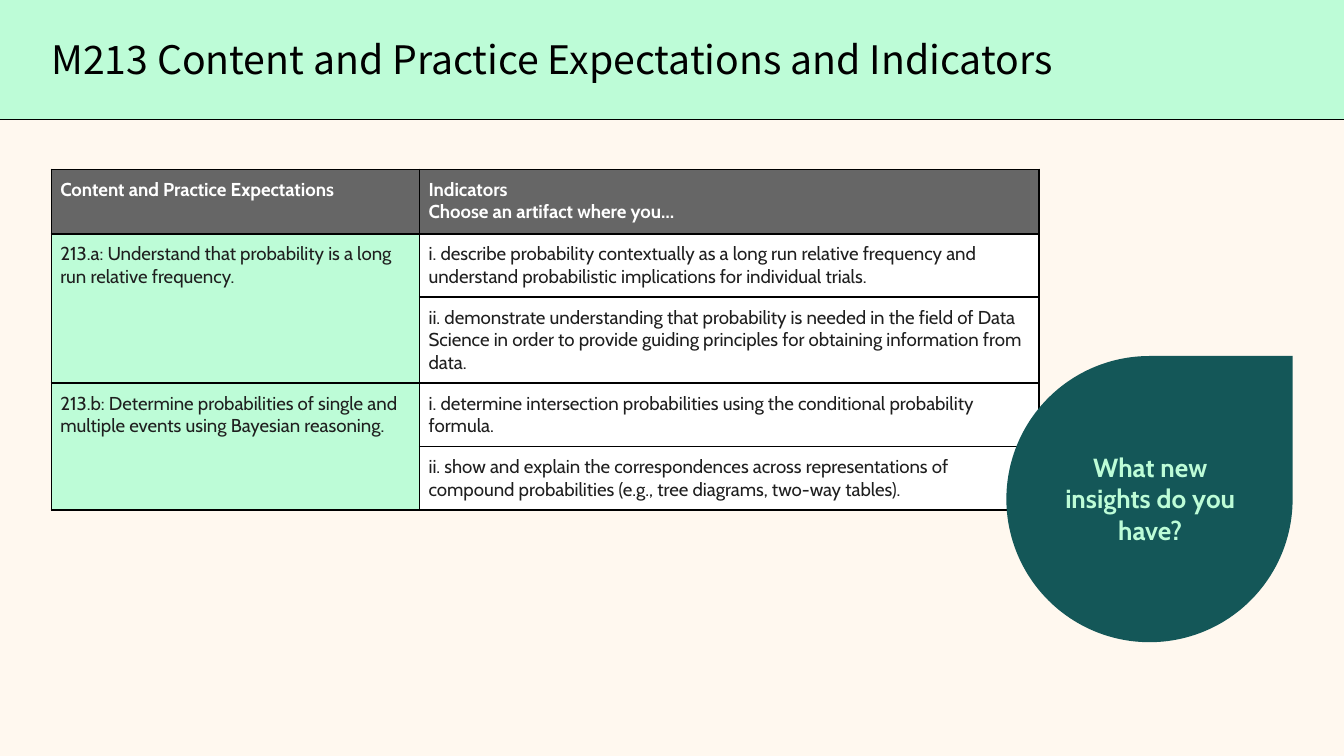
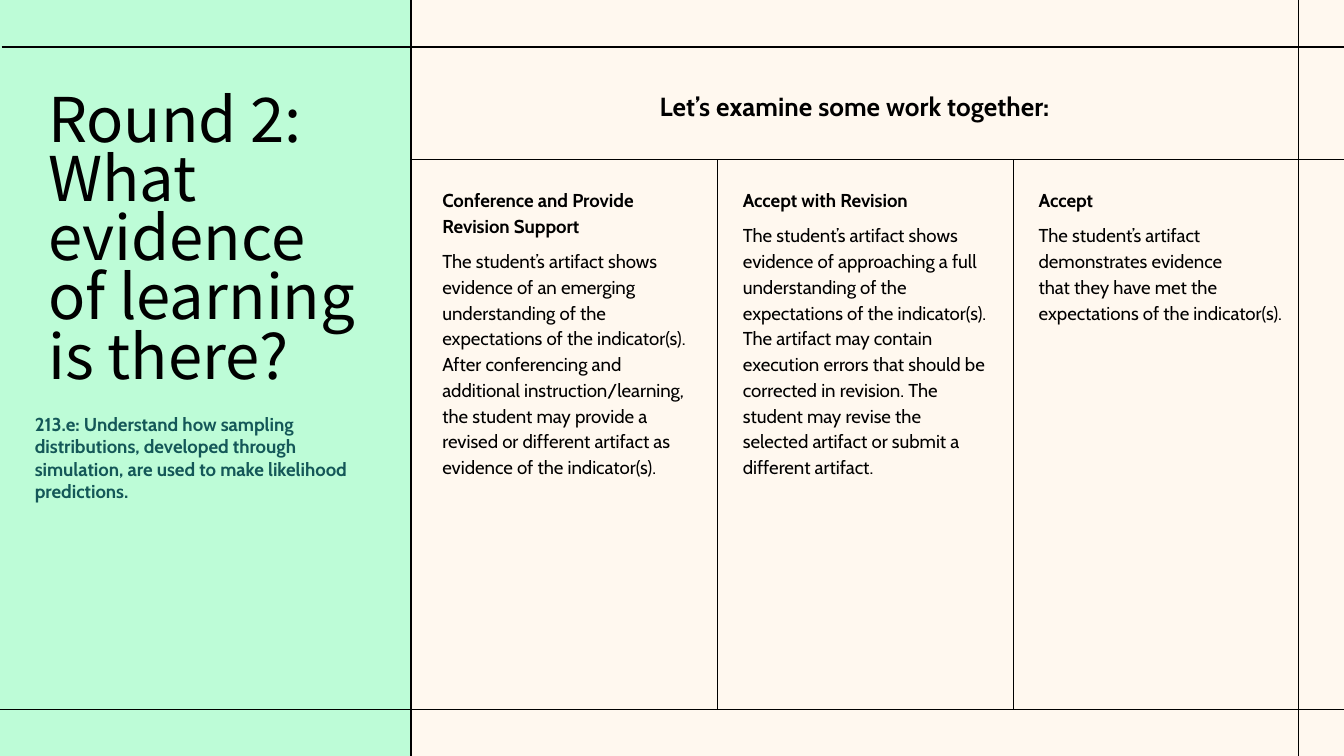
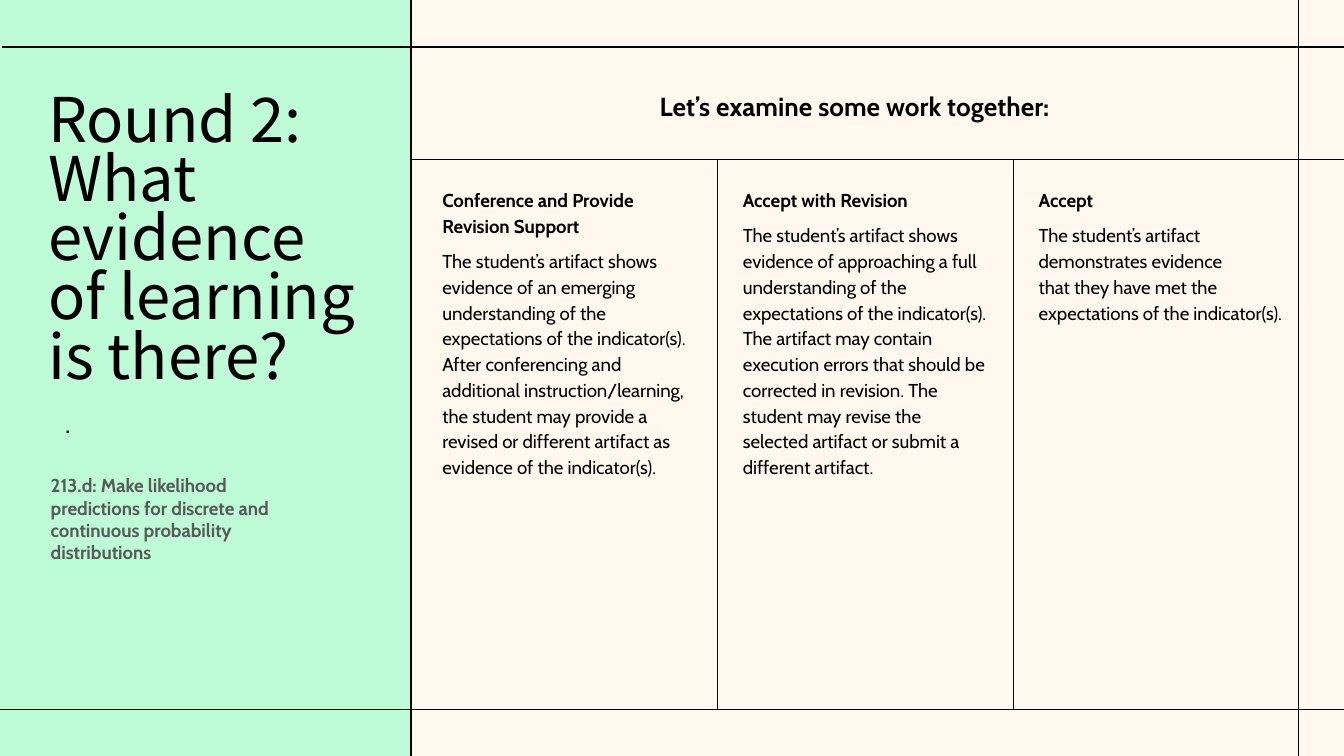
from lxml.etree import SubElement
from pptx import Presentation
from pptx.dml.color import RGBColor
from pptx.enum.shapes import MSO_CONNECTOR, MSO_SHAPE
from pptx.enum.text import MSO_ANCHOR, MSO_AUTO_SIZE, PP_ALIGN
from pptx.oxml.ns import qn
from pptx.util import Cm, Pt

W, H = 25.4, 14.29
CREAM, MINT, TEAL = "FFF8EF", "BDFCD7", "145758"
BLACK, WHITE, INK, HEADER, GRAY = "000000", "FFFFFF", "1F1F1F", "666666", "595959"
TITLE_FONT, BODY_FONT = "Noto Sans CJK KR", "Cabin"

EXPECTATIONS = [
    ("213.a: Understand that probability is a long run relative frequency.", [
        "i. describe probability contextually as a long run relative frequency and "
        "understand probabilistic implications for individual trials.",
        "ii. demonstrate understanding that probability is needed in the field of Data "
        "Science in order to provide guiding principles for obtaining information from data."]),
    ("213.b: Determine probabilities of single and multiple events using Bayesian reasoning.", [
        "i. determine intersection probabilities using the conditional probability formula.",
        "ii. show and explain the correspondences across representations of compound "
        "probabilities (e.g., tree diagrams, two-way tables)."]),
]

DECISIONS = [
    (8.36, 6.5, "Conference and Provide Revision Support",
     "The student’s artifact shows evidence of an emerging understanding of the "
     "expectations of the indicator(s). After conferencing and additional "
     "instruction/learning, the student may provide a revised or different artifact as "
     "evidence of the indicator(s)."),
    (14.04, 6.02, "Accept with Revision",
     "The student’s artifact shows evidence of approaching a full understanding of the "
     "expectations of the indicator(s). The artifact may contain execution errors that "
     "should be corrected in revision. The student may revise the selected artifact or "
     "submit a different artifact."),
    (19.63, 3.07, "Accept",
     "The student’s artifact demonstrates evidence \nthat they have met the expectations "
     "of the indicator(s)."),
]


def rgb(color):
    return RGBColor.from_string(color)


class Deck:
    """Hold the shared style and the current slide, and draw each kind of element."""

    def __init__(self):
        self.prs = Presentation()
        self.prs.slide_width, self.prs.slide_height = Cm(W), Cm(H)

    def slide(self):
        self.s = self.prs.slides.add_slide(self.prs.slide_layouts[6])
        fill = self.s.background.fill
        fill.solid()
        fill.fore_color.rgb = rgb(CREAM)

    def shape(self, kind, x, y, w, h, color):
        sp = self.s.shapes.add_shape(kind, Cm(x), Cm(y), Cm(w), Cm(h))
        sp.shadow.inherit = False
        sp.fill.solid()
        sp.fill.fore_color.rgb = rgb(color)
        sp.line.fill.background()

    def line(self, x1, y1, x2, y2):
        cn = self.s.shapes.add_connector(MSO_CONNECTOR.STRAIGHT, Cm(x1), Cm(y1), Cm(x2), Cm(y2))
        cn.line.color.rgb = rgb(BLACK)
        cn.line.width = Pt(0.75)
        SubElement(cn._element.spPr, qn("a:effectLst"))

    def box(self, x, y, w, h, inset=0):
        tf = self.s.shapes.add_textbox(Cm(x), Cm(y), Cm(w), Cm(h)).text_frame
        tf.word_wrap = True
        tf.auto_size = MSO_AUTO_SIZE.SHAPE_TO_FIT_TEXT
        tf.vertical_anchor = MSO_ANCHOR.TOP
        tf.margin_left = tf.margin_right = tf.margin_top = tf.margin_bottom = Cm(inset)
        return tf

    def para(self, tf, text, size=10, color=BLACK, bold=False, font=BODY_FONT,
             align=PP_ALIGN.LEFT, spacing=None, gap=None):
        p = tf.add_paragraph() if tf.text else tf.paragraphs[0]
        p.alignment = align
        p.line_spacing = spacing
        if gap is not None:
            p.space_before = p.space_after = Pt(gap)
        for i, part in enumerate(text.split("\n")):
            if i:
                p.add_line_break()
            r = p.add_run()
            r.text = part
            r.font.size, r.font.bold, r.font.name = Pt(size), bold, font
            r.font.color.rgb = rgb(color)

    def title(self, x, y, w, h, lines, size, spacing):
        tf = self.box(x, y, w, h)
        for text in lines:
            self.para(tf, text, size, font=TITLE_FONT, spacing=spacing)

    def cell(self, cell, fill, lines=(), color=INK, bold=False):
        cell.margin_left = cell.margin_right = cell.margin_top = cell.margin_bottom = Cm(0.17)
        tcPr = cell._tc.get_or_add_tcPr()
        for side in ("lnL", "lnR", "lnT", "lnB"):
            ln = SubElement(tcPr, qn(f"a:{side}"), w=str(Pt(1)))
            SubElement(SubElement(ln, qn("a:solidFill")), qn("a:srgbClr"), val=BLACK)
        cell.fill.solid()
        cell.fill.fore_color.rgb = rgb(fill)
        for text in lines:
            self.para(cell.text_frame, text, color=color, bold=bold)

    def table(self, x, y, widths, heights, header, groups):
        tb = self.s.shapes.add_table(len(heights), len(widths), Cm(x), Cm(y),
                                     Cm(sum(widths)), Cm(sum(heights))).table
        tb.first_row = tb.horz_banding = False
        for col, width in zip(tb.columns, widths):
            col.width = Cm(width)
        for row, height in zip(tb.rows, heights):
            row.height = Cm(height)
        for c, lines in enumerate(header):
            self.cell(tb.cell(0, c), HEADER, lines, WHITE, True)
        top = 1
        for name, items in groups:
            for i, item in enumerate(items):
                self.cell(tb.cell(top + i, 0), MINT, [] if i else [name])
                self.cell(tb.cell(top + i, 1), WHITE, [item])
            tb.cell(top, 0).merge(tb.cell(top + len(items) - 1, 0))
            top += len(items)

    def round_two(self):
        self.slide()
        left, right, panel = 0.03, 25.45, 7.77
        head, foot = 3.02, 13.41
        self.line(left, head, right, head)
        self.para(self.box(8.66, 1.7, 14.99, 0.61), "Let’s examine some work together:",
                  14, bold=True, align=PP_ALIGN.CENTER)
        self.line(24.54, -0.03, 24.54, 14.3)
        self.shape(MSO_SHAPE.RECTANGLE, 0, 0, panel, H, MINT)
        self.line(-0.05, foot, right, foot)
        self.line(panel, -0.03, panel, 14.3)
        self.line(left, 0.89, right, 0.89)
        self.title(0.91, 1.8, 6.02, 5.64,
                   ["Round 2:", "What evidence of learning is there?"], 33, 0.8)
        for x in (13.56, 19.15):
            self.line(x, head, x, foot)
        for x, h, name, body in DECISIONS:
            tf = self.box(x, 3.51, 4.63, h)
            self.para(tf, name, bold=True, spacing=1.15)
            self.para(tf, body, spacing=1.15, gap=5)


def main():
    d = Deck()

    d.slide()
    d.table(0.97, 3.2, [6.96, 11.71], [1.22] + [0.74] * 4,
            [["Content and Practice Expectations"],
             ["Indicators", "Choose an artifact where you…"]], EXPECTATIONS)
    d.shape(MSO_SHAPE.RECTANGLE, 0, 0, W, 2.26, MINT)
    d.title(0.97, 0.76, 23.67, 0.81,
            ["M213 Content and Practice Expectations and Indicators"], 21, 0.9)
    d.line(W, 2.26, 0, 2.26)
    d.shape(MSO_SHAPE.TEAR, 19.02, 6.73, 5.41, 5.41, TEAL)
    d.para(d.box(19.81, 8.53, 3.86, 1.8), "What new insights do you have?",
           14, MINT, True, align=PP_ALIGN.CENTER)

    d.round_two()
    d.para(d.box(0.66, 7.8, 6.02, 1.7),
           "213.e: Understand how sampling distributions, developed through simulation, "
           "are used to make likelihood predictions.", color=TEAL, bold=True)

    d.round_two()
    d.para(d.box(1.24, 7.85, 5.69, 0.43), ".", bold=True)
    d.para(d.box(0.71, 8.71, 5.08, 2.24, 0.25),
           "213.d: Make likelihood predictions for discrete and continuous probability "
           "distributions", color=GRAY, bold=True)

    d.prs.save("out.pptx")


if __name__ == "__main__":
    main()
